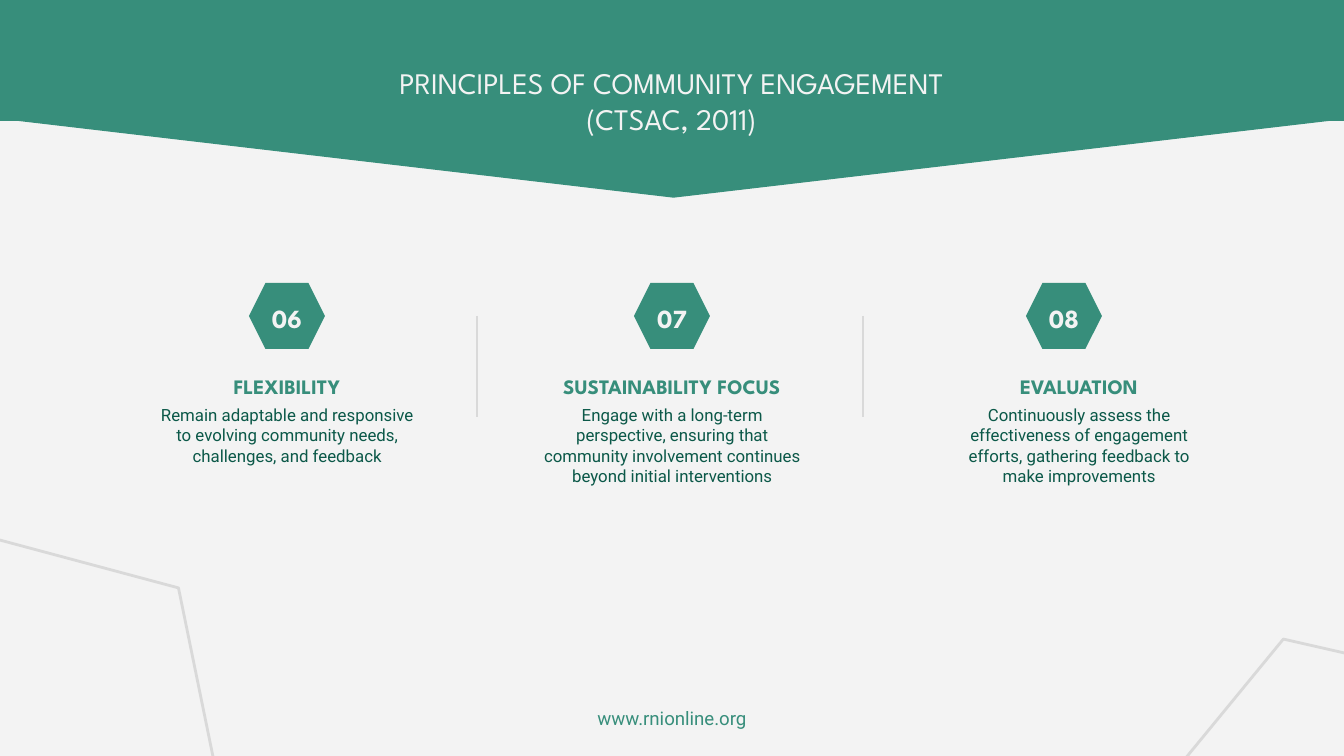
from pptx import Presentation
from pptx.dml.color import RGBColor
from pptx.enum.shapes import MSO_CONNECTOR, MSO_SHAPE
from pptx.enum.text import MSO_ANCHOR, MSO_AUTO_SIZE, PP_ALIGN
from pptx.oxml.ns import qn
from pptx.util import Emu, Pt
from lxml import etree

HEXAGON, TRIANGLE, RECT = MSO_SHAPE.HEXAGON, MSO_SHAPE.ISOSCELES_TRIANGLE, MSO_SHAPE.RECTANGLE
STRAIGHT = MSO_CONNECTOR.STRAIGHT
TOP, MIDDLE = MSO_ANCHOR.TOP, MSO_ANCHOR.MIDDLE
CENTER, NO_FIT = PP_ALIGN.CENTER, MSO_AUTO_SIZE.NONE

GREEN = RGBColor(0x37, 0x8E, 0x7B)
DARK_GREEN = RGBColor(0x0B, 0x58, 0x48)
LIGHT = RGBColor(0xF3, 0xF3, 0xF3)
GREY = RGBColor(0xD9, 0xD9, 0xD9)
HEAD_FONT, BODY_FONT = "League Spartan", "Roboto"
PX = 914400 / 134.4


def px(*values):
    """Turn pixel lengths into EMU."""
    return [Emu(round(v * PX)) for v in values]


def write(sp, text, font, size, color, bold=False, anchor=TOP):
    """Fill a text shape with centred text in one style."""
    tf = sp.text_frame
    tf.word_wrap, tf.auto_size, tf.vertical_anchor = True, NO_FIT, anchor
    tf.margin_left, tf.margin_top, tf.margin_right, tf.margin_bottom = px(13, 13, 13, 13)
    tf.text = text
    p = tf.paragraphs[0]
    p.alignment = CENTER
    for r in p.runs:
        r.font.name, r.font.size, r.font.bold = font, Pt(size), bold
        r.font.color.rgb = color


prs = Presentation()
prs.slide_width, prs.slide_height = px(1344, 756)
s = prs.slides.add_slide(prs.slide_layouts[5])
s.background.fill.solid()
s.background.fill.fore_color.rgb = LIGHT

# Header banner
for kind, top, height, turn in [(TRIANGLE, 118, 79, 180), (RECT, -5, 125, 0)]:
    sp = s.shapes.add_shape(kind, *px(-1, top, 1349, height))
    sp.shadow.inherit = False
    sp.rotation = turn
    sp.fill.solid()
    sp.fill.fore_color.rgb = GREEN
    sp.line.color.rgb = GREEN
    sp.line.width = Pt(0.75)

# Corner outlines
for left, top, turn in [(-210, 548, 15), (1114, 679, 309.4)]:
    sp = s.shapes.add_shape(HEXAGON, *px(left, top, 434, 340))
    sp.shadow.inherit = False
    sp.rotation = turn
    sp.fill.background()
    sp.line.color.rgb = GREY
    sp.line.width = Pt(1.5)

# Dividers between the principles
for x in (477, 863):
    line = s.shapes.add_connector(STRAIGHT, *px(x, 316, x, 417))
    line.line.color.rgb = GREY
    line.line.width = Pt(1.5)
    etree.SubElement(line._element.spPr, qn("a:effectLst"))

# Principles: number, badge centre, text centre, heading, description
principles = [
    ("06", 287, 287, "FLEXIBILITY",
     "Remain adaptable and responsive to evolving community needs, challenges, and feedback"),
    ("07", 672, 672, "SUSTAINABILITY FOCUS",
     "Engage with a long-term perspective, ensuring that community involvement continues "
     "beyond initial interventions"),
    ("08", 1064, 1079, "EVALUATION",
     "Continuously assess the effectiveness of engagement efforts, gathering feedback to "
     "make improvements"),
]
for number, badge_x, text_x, heading, description in principles:
    badge = s.shapes.add_shape(HEXAGON, *px(badge_x - 38, 283, 76, 66))
    badge.shadow.inherit = False
    badge.fill.solid()
    badge.fill.fore_color.rgb = GREEN
    badge.line.fill.background()

    sp = s.shapes.add_textbox(*px(badge_x - 55, 296, 110, 44))
    write(sp, number, HEAD_FONT, 14, LIGHT, True, MIDDLE)
    sp = s.shapes.add_textbox(*px(text_x - 136, 344, 272, 85))
    write(sp, heading, HEAD_FONT, 11, GREEN, True, MIDDLE)
    sp = s.shapes.add_textbox(*px(text_x - 145, 392, 290, 85))
    write(sp, description, BODY_FONT, 9, DARK_GREEN)

# Title, brought in front of the banner
title = s.shapes.title
title.left, title.top, title.width, title.height = px(310, 52, 723, 101)
write(title, "PRINCIPLES OF COMMUNITY ENGAGEMENT\v(CTSAC, 2011)", HEAD_FONT, 16, LIGHT)
s.shapes._spTree.append(title._element)

sp = s.shapes.add_textbox(*px(523, 694, 298, 51))
write(sp, "www.rnionline.org", BODY_FONT, 10, GREEN)

prs.save("out.pptx")
